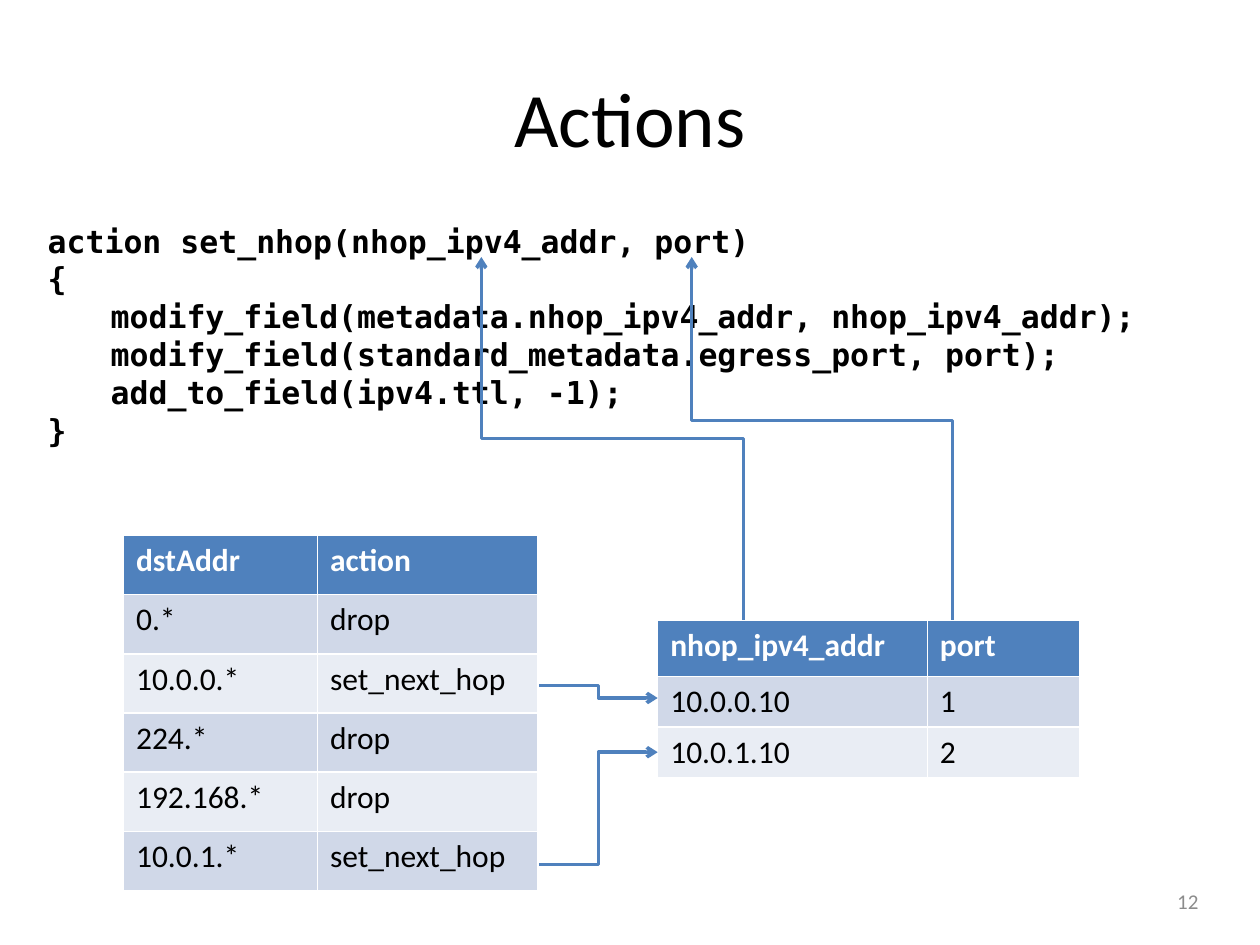
import pptx
import pptx.util
import pptx.dml.color
import pptx.enum.shapes
import pptx.enum.text
import pptx.oxml.ns
import lxml.etree

Inches, Pt = pptx.util.Inches, pptx.util.Pt
ALIGN = pptx.enum.text.PP_ALIGN
MIDDLE = pptx.enum.text.MSO_ANCHOR.MIDDLE
qn = pptx.oxml.ns.qn

COLORS = {"black": "000000", "white": "FFFFFF", "blue": "4F81BD",
          "band_dark": "D0D8E8", "band_light": "E9EDF4", "gray": "8C8C8C"}
FONT, CODE_FONT = "Calibri", "DejaVu Sans Mono"

CODE = [(0, "action set_nhop(nhop_ipv4_addr, port)"),
        (0, "{"),
        (1, "modify_field(metadata.nhop_ipv4_addr, nhop_ipv4_addr);"),
        (1, "modify_field(standard_metadata.egress_port, port);"),
        (1, "add_to_field(ipv4.ttl, -1);"),
        (0, "}")]
MATCH_ROWS = [("dstAddr", "action"), ("0.*", "drop"),
              ("10.0.0.*", "set_next_hop"), ("224.*", "drop"),
              ("192.168.*", "drop"), ("10.0.1.*", "set_next_hop")]
PARAM_ROWS = [("nhop_ipv4_addr", "port"), ("10.0.0.10", "1"), ("10.0.1.10", "2")]


def rgb(name):
    return pptx.dml.color.RGBColor.from_string(COLORS[name])


def style(p, size, color="black", bold=False, font=FONT, align=None):
    p.alignment = align
    for r in p.runs:
        r.font.size, r.font.bold, r.font.name = Pt(size), bold, font
        r.font.color.rgb = rgb(color)


def add_text_box(s, x, y, w, h):
    tf = s.shapes.add_textbox(Inches(x), Inches(y), Inches(w), Inches(h)).text_frame
    tf.word_wrap = True
    return tf


def add_title(s, text):
    title = s.shapes.title
    title.left, title.top = Inches(0.5), Inches(0.3)
    title.width, title.height = Inches(9), Inches(1.25)
    title.text_frame.text = text
    title.text_frame.vertical_anchor = MIDDLE
    style(title.text_frame.paragraphs[0], 44, align=ALIGN.CENTER)


def add_code(s, lines):
    tf = add_text_box(s, 0.28, 1.71, 9.42, 1.92)
    tf.text = "\n".join(text for _, text in lines)
    for p, (depth, _) in zip(tf.paragraphs, lines):
        p._p.get_or_add_pPr().set("marL", str(Inches(0.5 * depth)))
        style(p, 18, bold=True, font=CODE_FONT)


def add_table(s, x, y, widths, heights, rows):
    table = s.shapes.add_table(len(rows), len(widths), Inches(x), Inches(y),
                               Inches(sum(widths)), Inches(sum(heights))).table
    for column, w in zip(table.columns, widths):
        column.width = Inches(w)
    for i, (values, h) in enumerate(zip(rows, heights)):
        table.rows[i].height = Inches(h)
        header = i == 0
        fill = "blue" if header else ("band_light", "band_dark")[i % 2]
        for j, value in enumerate(values):
            cell = table.cell(i, j)
            cell.text_frame.text = value
            cell.fill.solid()
            cell.fill.fore_color.rgb = rgb(fill)
            style(cell.text_frame.paragraphs[0], 18,
                  "white" if header else "black", header)


def add_elbow_arrow(s, start, end, upward=False, bend=0.5):
    (x1, y1), (x2, y2) = start, end
    if upward:  # lay the path out sideways, then turn it a quarter left
        cx, cy = (x1 + x2) / 2, (y1 + y2) / 2
        x1, y1, x2, y2 = cx + y2 - cy, cy + x1 - cx, cx + y1 - cy, cy + x2 - cx
    c = s.shapes.add_connector(pptx.enum.shapes.MSO_CONNECTOR.ELBOW,
                               Inches(x1), Inches(y1), Inches(x2), Inches(y2))
    c.line.width = Pt(2)
    c.line.color.rgb = rgb("blue")
    sp_pr = c._element.spPr
    if upward:
        sp_pr.find(qn("a:xfrm")).set("rot", str(270 * 60000))
    guides = sp_pr.find(qn("a:prstGeom")).find(qn("a:avLst"))
    lxml.etree.SubElement(guides, qn("a:gd"), name="adj1",
                          fmla=f"val {round(bend * 100000)}")
    lxml.etree.SubElement(sp_pr.find(qn("a:ln")), qn("a:tailEnd"), type="arrow")
    lxml.etree.SubElement(sp_pr, qn("a:effectLst"))


def add_page_number(s, text):
    tf = add_text_box(s, 8.57, 6.95, 1.04, 0.4)
    tf.text = text
    tf.vertical_anchor = MIDDLE
    style(tf.paragraphs[0], 12, "gray", align=ALIGN.RIGHT)


def main():
    prs = pptx.Presentation()
    prs.slide_width, prs.slide_height = Inches(10), Inches(7.5)
    s = prs.slides.add_slide(prs.slide_layouts[5])

    add_title(s, "Actions")
    add_code(s, CODE)

    # Action parameters, and the match table that points to them
    add_table(s, 5.22, 4.92, [2.14, 1.21], [0.45, 0.4, 0.4], PARAM_ROWS)
    add_elbow_arrow(s, (4.28, 5.44), (5.22, 5.54))
    add_elbow_arrow(s, (4.28, 6.86), (5.22, 5.97))
    add_table(s, 0.98, 4.25, [1.54, 1.75], [0.47] * len(MATCH_ROWS), MATCH_ROWS)
    add_page_number(s, "12")

    # Parameter columns feed the arguments of the action
    add_elbow_arrow(s, (5.9, 4.92), (3.82, 2.04), upward=True)
    add_elbow_arrow(s, (7.56, 4.92), (5.49, 2.04), upward=True, bend=0.55)

    prs.save("out.pptx")


if __name__ == "__main__":
    main()
